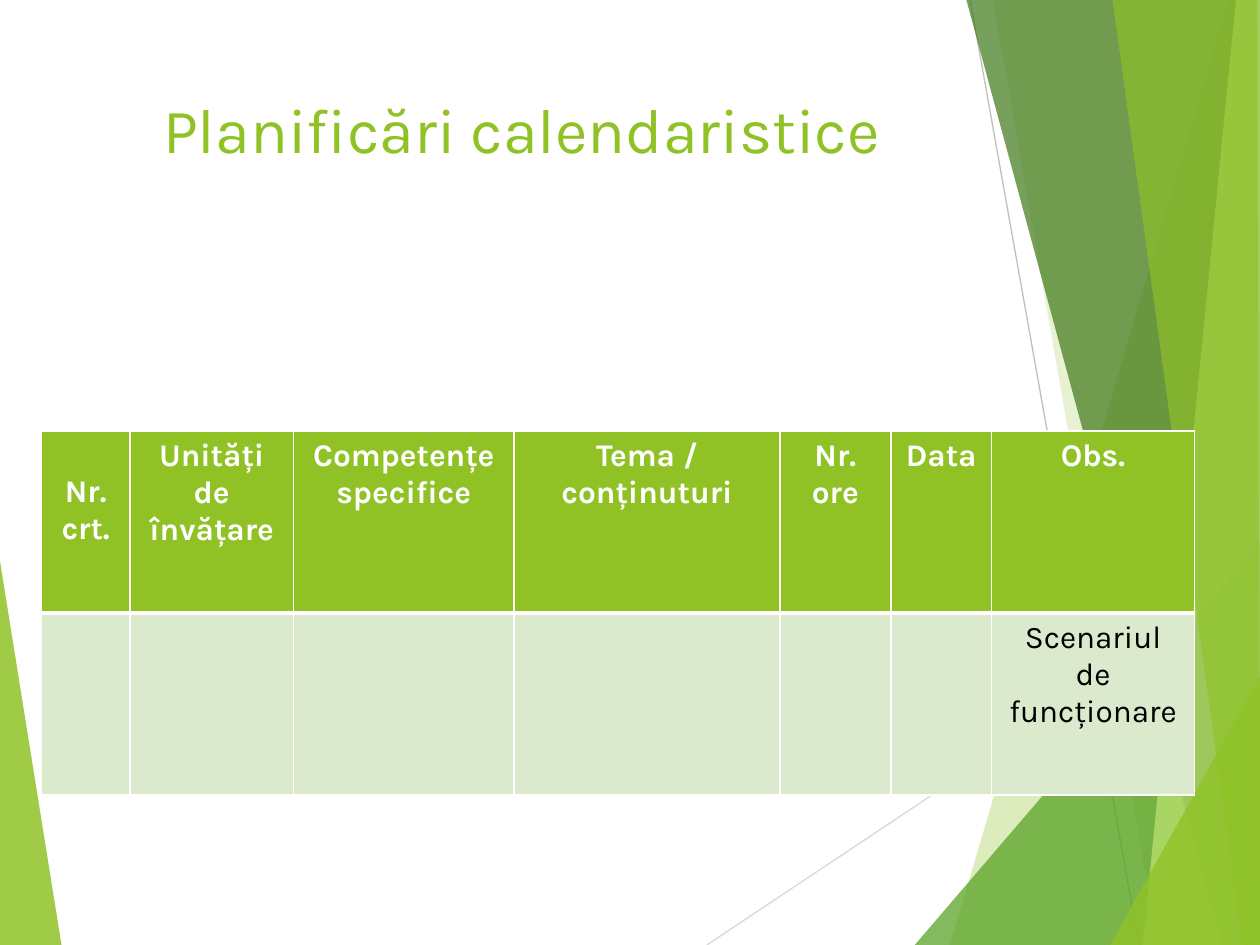
from lxml.etree import SubElement
from pptx import Presentation
from pptx.dml.color import RGBColor
from pptx.enum.shapes import MSO_CONNECTOR as Connector
from pptx.enum.text import MSO_ANCHOR as Anchor, PP_ALIGN as Align
from pptx.oxml.ns import qn
from pptx.util import Inches, Pt

COLORS = {
    "white": "FFFFFF",
    "black": "000000",
    "lime": "90C226",
    "green": "54A021",
    "forest": "3F7819",
    "pale_lime": "C0E474",
    "pale_green": "DBE9CD",
    "gray": "BFBFBF",
    "light_gray": "D9D9D9",
}
FONT = "Karla"

LEFT_WEDGE = [(0, 0), (0.5, 3.12), (0, 3.11)]
RIGHT_FACETS = [
    ([(4.14, 0), (1.93, 7.5), (4.4, 7.5), (4.4, 0)], "lime", 30),
    ([(2.27, 0), (3.58, 7.5), (4.4, 7.5), (4.4, 0)], "lime", 20),
    ([(1.65, 7.5), (4.4, 4.29), (4.4, 7.5)], "green", 72),
    ([(2.06, 0), (4.09, 7.5), (4.4, 7.5), (4.4, 0)], "forest", 70),
    ([(4.2, 0), (3.46, 7.5), (4.4, 7.5), (4.4, 0)], "pale_lime", 70),
    ([(3.22, 0), (4.25, 7.5), (4.39, 7.5), (4.37, 0)], "lime", 65),
    ([(3.2, 7.5), (4.4, 5.35), (4.4, 7.5)], "lime", 80),
]
RIGHT_LINES = [
    ((0, 7.5), (4.4, 4.57), "light_gray"),
    ((2.09, 0), (3.43, 7.5), "gray"),
]
HEADERS = [
    ["Nr.", "crt."],
    ["Unități de învățare"],
    ["Competențe specifice"],
    ["Tema / conținuturi"],
    ["Nr. ore"],
    ["Data"],
    ["Obs."],
]
ENTRIES = [[""]] * 6 + [["Scenariul de funcționare"]]
COLUMN_WIDTHS = [0.7, 1.3, 1.75, 2.11, 0.88, 0.8, 1.61]


def rgb(name):
    return RGBColor.from_string(COLORS[name])


def write_text(frame, lines, size=18, color="black", bold=False):
    frame.word_wrap = True
    for index, line in enumerate(lines):
        paragraph = frame.paragraphs[0] if index == 0 else frame.add_paragraph()
        paragraph.alignment = Align.CENTER
        paragraph.font.size = Pt(size)
        if line:
            run = paragraph.add_run()
            run.text = line
            run.font.name = FONT
            run.font.size = Pt(size)
            run.font.bold = bold
            run.font.color.rgb = rgb(color)


def add_facet(slide, left, top, points, color, opacity):
    corners = [(Inches(left + x), Inches(top + y)) for x, y in points]
    builder = slide.shapes.build_freeform(*corners[0], scale=1.0)
    builder.add_line_segments(corners[1:], close=True)
    shape = builder.convert_to_shape()
    shape.shadow.inherit = False
    shape.fill.solid()
    shape.fill.fore_color.rgb = rgb(color)
    shape.line.fill.background()
    fill_color = shape.element.spPr.find(qn("a:solidFill"))[0]
    SubElement(fill_color, qn("a:alpha"), val=str(opacity * 1000))


def add_hairline(slide, left, top, start, end, color):
    line = slide.shapes.add_connector(
        Connector.STRAIGHT,
        Inches(left + start[0]), Inches(top + start[1]),
        Inches(left + end[0]), Inches(top + end[1]),
    )
    line.line.color.rgb = rgb(color)
    line.line.width = Pt(0.75)
    SubElement(line.element.spPr, qn("a:effectLst"))


def add_left_accent(slide, left, top):
    add_facet(slide, left, top, LEFT_WEDGE, "lime", 85)


def add_right_accent(slide, left, top):
    for start, end, color in RIGHT_LINES:
        add_hairline(slide, left, top, start, end, color)
    for points, color, opacity in RIGHT_FACETS:
        add_facet(slide, left, top, points, color, opacity)


def add_title(slide, left, top, width, height):
    box = slide.shapes.add_textbox(
        Inches(left), Inches(top), Inches(width), Inches(height))
    box.text_frame.vertical_anchor = Anchor.TOP
    write_text(box.text_frame, ["Planificări calendaristice"], size=36, color="lime")


def set_borders(cell, widths):
    properties = cell._tc.get_or_add_tcPr()
    for index, (side, width) in enumerate(widths.items()):
        border = SubElement(properties, qn(f"a:ln{side}"), w=str(Pt(width)))
        fill = SubElement(border, qn("a:solidFill"))
        SubElement(fill, qn("a:srgbClr"), val=COLORS["white"])
        properties.remove(border)
        properties.insert(index, border)


def add_plan_table(slide, left, top, width, height):
    rows = [
        (HEADERS, "lime", "white", True),
        (ENTRIES, "pale_green", "black", False),
    ]
    table = slide.shapes.add_table(
        len(rows), len(HEADERS),
        Inches(left), Inches(top), Inches(width), Inches(height)).table
    for column, column_width in zip(table.columns, COLUMN_WIDTHS):
        column.width = Inches(column_width)
    for row_index, (texts, fill, color, bold) in enumerate(rows):
        for column_index, lines in enumerate(texts):
            cell = table.cell(row_index, column_index)
            cell.fill.solid()
            cell.fill.fore_color.rgb = rgb(fill)
            write_text(cell.text_frame, lines, color=color, bold=bold)
            top_width, bottom_width = (1, 3) if row_index == 0 else (3, 1)
            set_borders(cell, {"L": 1, "R": 1, "T": top_width, "B": bottom_width})
    table.cell(0, 0).margin_top = Inches(0.34)


def main():
    presentation = Presentation()
    presentation.slide_width = Inches(10)
    presentation.slide_height = Inches(7.5)
    slide = presentation.slides.add_slide(presentation.slide_layouts[6])
    slide.background.fill.solid()
    slide.background.fill.fore_color.rgb = rgb("white")
    add_left_accent(slide, -0.01, 4.39)
    add_right_accent(slide, 5.61, 0)
    add_title(slide, 0.67, 0.67, 6.94, 1.44)
    add_plan_table(slide, 0.33, 3.42, 9.15, 2.89)
    presentation.save("out.pptx")


if __name__ == "__main__":
    main()
